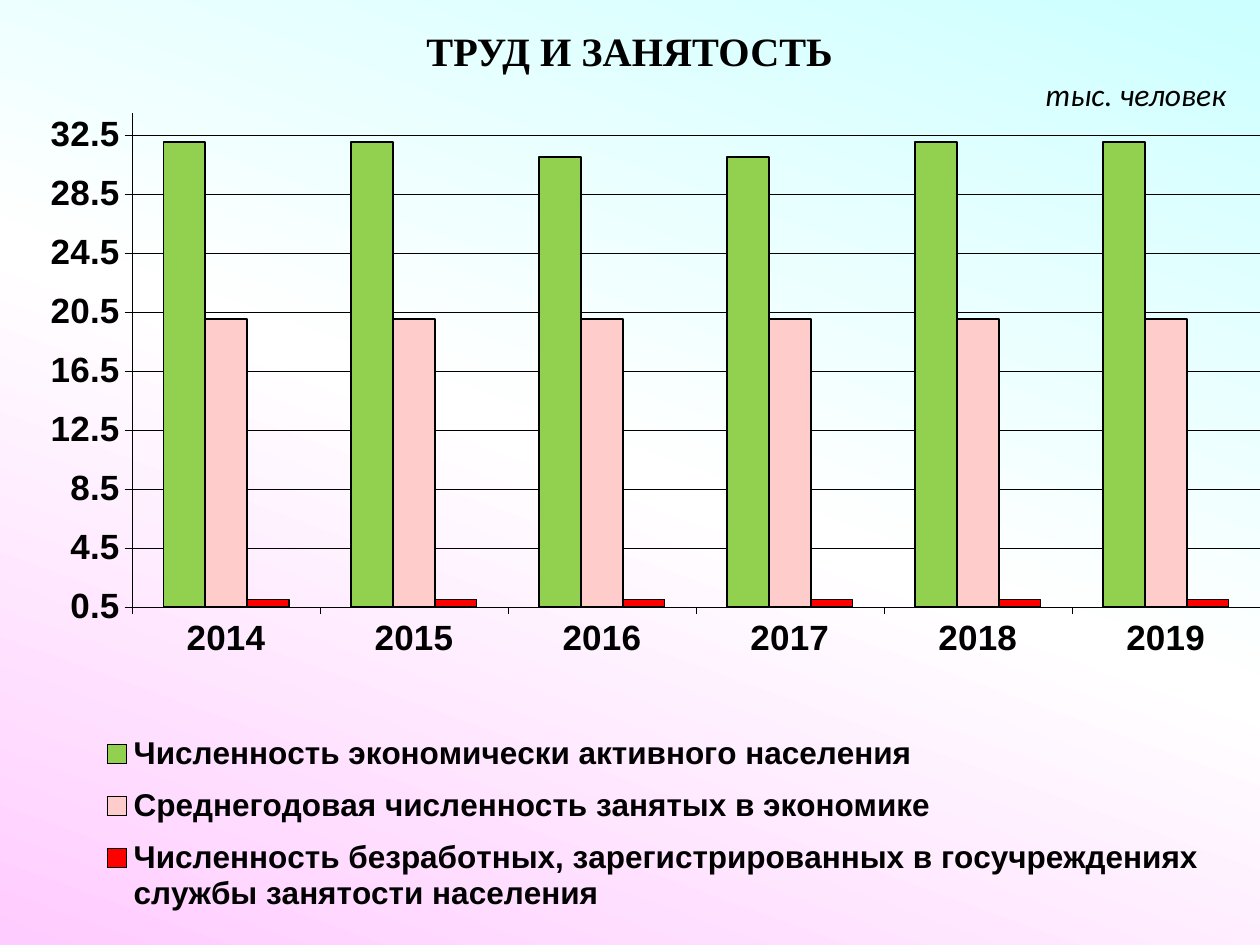
from dataclasses import dataclass
from copy import deepcopy
from lxml.etree import SubElement
from pptx import Presentation
from pptx.chart.data import CategoryChartData
from pptx.dml.color import RGBColor
from pptx.enum.chart import XL_CHART_TYPE, XL_LEGEND_POSITION, XL_TICK_LABEL_POSITION, XL_TICK_MARK
from pptx.enum.text import MSO_ANCHOR, MSO_AUTO_SIZE, PP_ALIGN
from pptx.oxml import parse_xml
from pptx.oxml.ns import nsdecls, qn
from pptx.util import Inches, Pt


@dataclass
class Series:
    name: str
    vals: tuple[int, ...]
    fill: str


YEARS = [str(year) for year in range(2014, 2020)]
ROWS = [
    Series("Численность экономически активного населения",
           (32, 32, 31, 31, 32, 32), "92D050"),
    Series("Среднегодовая численность занятых в экономике",
           (20,) * len(YEARS), "FFCCCC"),
    Series("Численность безработных, зарегистрированных в госучреждениях службы занятости населения",
           (1,) * len(YEARS), "FF0000"),
]
INK = "000000"


def paint(color, code: str) -> None:
    color.rgb = RGBColor.from_string(code)


def style(font, face: str, size: float, bold: bool = False, slant: bool = False) -> None:
    font.name = face
    font.size = Pt(size)
    font.bold = bold
    font.italic = slant
    paint(font.color, INK)


def rule(line, width: float) -> None:
    line.width = Pt(width)
    paint(line.color, INK)


def place(shape, left: float, top: float, width: float, height: float) -> None:
    shape.left, shape.top = Inches(left), Inches(top)
    shape.width, shape.height = Inches(width), Inches(height)


def shade(slide, codes: list[str], angle: float) -> None:
    fill = slide.background.fill
    fill.gradient()
    fill.gradient_angle = angle
    stops = slide._element.find(".//" + qn("a:gsLst"))
    while len(stops) < len(codes):
        stops.append(deepcopy(stops[-1]))
    for num, (stop, code) in enumerate(zip(fill.gradient_stops, codes)):
        stop.position = num / (len(codes) - 1)
        paint(stop.color, code)


def layout(host, index: int, box: tuple[float, ...], inner: bool = False) -> None:
    for old in host.findall(qn("c:layout")):
        host.remove(old)
    node = parse_xml(f"<c:layout {nsdecls('c')}><c:manualLayout/></c:layout>")
    parts = [("layoutTarget", "inner")] if inner else []
    parts += [("xMode", "edge"), ("yMode", "edge")]
    parts += list(zip("xywh", map(str, box)))
    for tag, val in parts:
        SubElement(node[0], qn("c:" + tag)).set("val", val)
    host.insert(index, node)


def add_bars(slide) -> None:
    data = CategoryChartData(number_format="General")
    data.categories = YEARS
    for row in ROWS:
        data.add_series(row.name, row.vals)
    chart = slide.shapes.add_chart(
        XL_CHART_TYPE.COLUMN_CLUSTERED,
        Inches(0.27), Inches(0.62), Inches(9.73), Inches(6.88), data).chart
    chart.has_title = False
    style(chart.font, "Arial", 25.8, True)
    plot = chart.plots[0]
    plot.gap_width, plot.overlap = 150, 0
    plot.vary_by_categories = False
    for bar, row in zip(plot.series, ROWS):
        bar.format.fill.solid()
        paint(bar.format.fill.fore_color, row.fill)
        rule(bar.format.line, 1)
    for axis in (chart.category_axis, chart.value_axis):
        axis.major_tick_mark = XL_TICK_MARK.OUTSIDE
        axis.minor_tick_mark = XL_TICK_MARK.NONE
        style(axis.tick_labels.font, "Arial", 20, True)
        rule(axis.format.line, 0.25)
    chart.category_axis.tick_label_position = XL_TICK_LABEL_POSITION.LOW
    scale = chart.value_axis
    scale.minimum_scale, scale.maximum_scale, scale.major_unit = 0.5, 34, 4
    scale.has_major_gridlines = True
    rule(scale.major_gridlines.format.line, 0.25)
    chart.has_legend = True
    key = chart.legend
    key.position = XL_LEGEND_POSITION.RIGHT
    key.include_in_layout = False
    style(key.font, "Arial", 18, True)
    layout(chart._chartSpace.chart.plotArea, 0, (0.08, 0.04, 0.92, 0.57), True)
    layout(key._element, 1, (0.04, 0.74, 0.93, 0.24))


def add_title(slide) -> None:
    title = slide.shapes.title
    place(title, 0, 0.16, 10, 0.62)
    frame = title.text_frame
    frame.auto_size = MSO_AUTO_SIZE.NONE
    frame.vertical_anchor = MSO_ANCHOR.TOP
    para = frame.paragraphs[0]
    para.alignment = PP_ALIGN.CENTER
    para.space_before = Pt(4.6)
    run = para.add_run()
    run.text = "ТРУД И ЗАНЯТОСТЬ"
    style(run.font, "Times New Roman", 23, True)


def add_unit(slide) -> None:
    box = slide.shapes.add_textbox(Inches(8.2), Inches(0.55), Inches(1.65), Inches(0.4))
    frame = box.text_frame
    frame.word_wrap = False
    frame.auto_size = MSO_AUTO_SIZE.SHAPE_TO_FIT_TEXT
    run = frame.paragraphs[0].add_run()
    run.text = "тыс. человек"
    style(run.font, "Calibri", 18, slant=True)


def main() -> None:
    deck = Presentation()
    deck.slide_width, deck.slide_height = Inches(10), Inches(7.5)
    slide = deck.slides.add_slide(deck.slide_layouts[5])
    shade(slide, ["CCFFFF", "FFFFFF", "FFCCFF"], 250)
    add_bars(slide)
    add_title(slide)
    add_unit(slide)
    deck.save("out.pptx")


if __name__ == "__main__":
    main()
